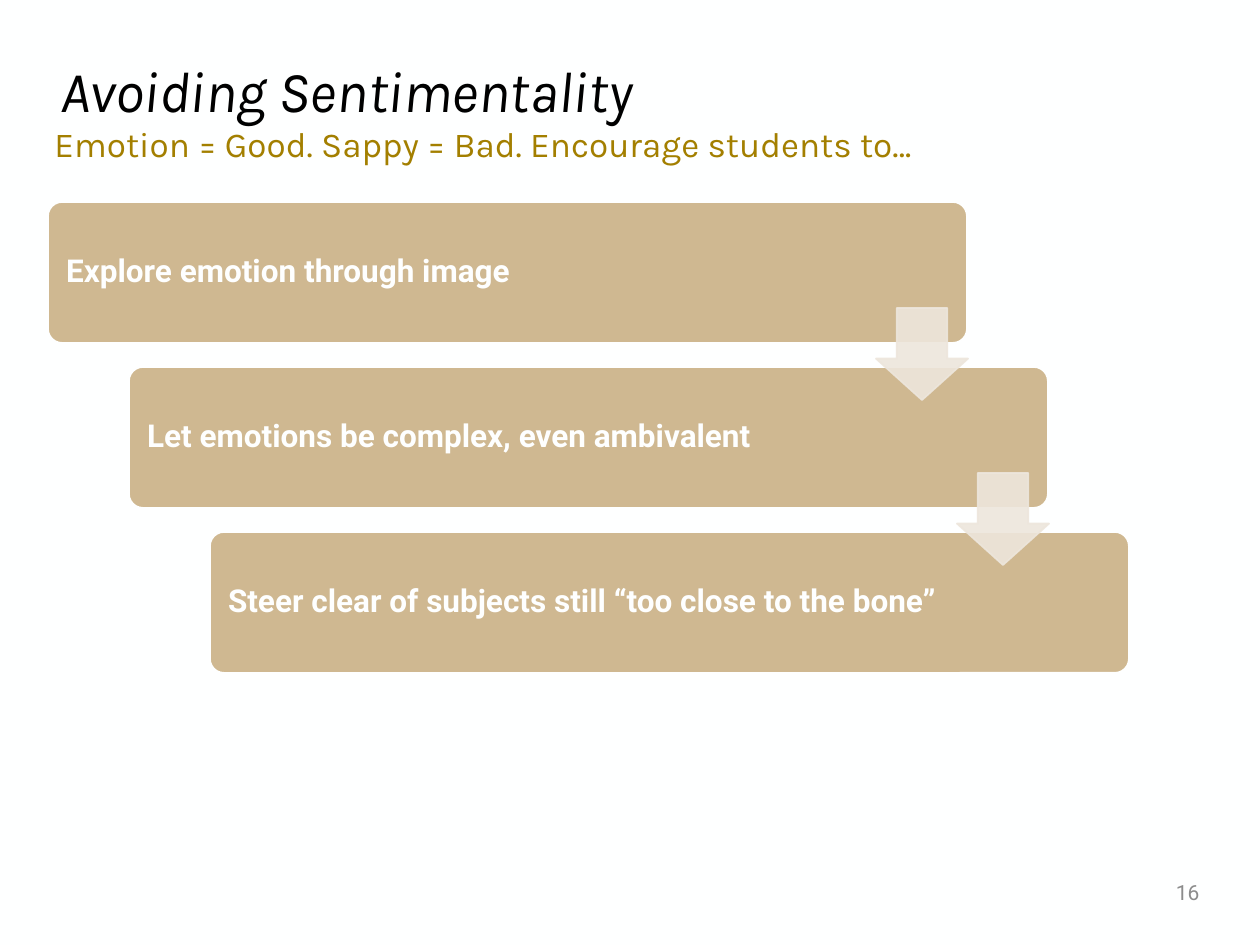
"""Build the Avoiding Sentimentality slide with three stepped cards."""
from dataclasses import dataclass
from lxml.etree import SubElement
from pptx import Presentation
from pptx.dml.color import RGBColor
from pptx.enum.shapes import MSO_SHAPE
from pptx.enum.text import MSO_ANCHOR, PP_ALIGN
from pptx.oxml.ns import qn
from pptx.util import Pt


@dataclass(frozen=True)
class Theme:
    paper: str = "FEFFFF"
    ink: str = "000000"
    gold: str = "A37F00"
    gray: str = "8C8C8C"
    card: str = "CFB891"
    arrow: str = "EDE6DC"
    head: str = "Karla"
    body: str = "Roboto"
    title: int = 33
    lead: int = 20
    label: int = 18
    number: int = 12


theme = Theme()
SCALE = 914400 / 126


def px(*sizes):
    return [round(size * SCALE) for size in sizes]


def write(shape, text, font, size, color, anchor=MSO_ANCHOR.MIDDLE, align=PP_ALIGN.LEFT):
    frame = shape.text_frame
    frame.word_wrap = True
    frame.vertical_anchor = anchor
    frame.text = text
    line = frame.paragraphs[0]
    line.alignment = align
    line.line_spacing = 0.9
    run = line.runs[0]
    run.font.name = font
    run.font.size = Pt(size)
    run.font.color.rgb = RGBColor.from_string(color)
    return run


deck = Presentation()
deck.slide_width, deck.slide_height = px(1260, 945)
slide = deck.slides.add_slide(deck.slide_layouts[6])
slide.background.fill.solid()
slide.background.fill.fore_color.rgb = RGBColor.from_string(theme.paper)
shapes = slide.shapes

title = shapes.add_textbox(*px(48, 53, 1164, 81))
write(title, "Avoiding Sentimentality", theme.head, theme.title, theme.ink).font.italic = True
lead = shapes.add_textbox(*px(42, 121, 1166, 50))
write(lead, "Emotion = Good. Sappy = Bad. Encourage students to…",
      theme.head, theme.lead, theme.gold, MSO_ANCHOR.TOP)
number = shapes.add_textbox(*px(1061, 867, 151, 50))
write(number, "16", theme.body, theme.number, theme.gray, align=PP_ALIGN.RIGHT)
number.text_frame.paragraphs[0].line_spacing = 1.0

steps = [
    "Explore emotion through image",
    "Let emotions be complex, even ambivalent",
    "Steer clear of subjects still “too close to the bone”",
]
DX, DY = 81, 165

for i, step in enumerate(steps):
    card = shapes.add_shape(MSO_SHAPE.ROUNDED_RECTANGLE, *px(48 + i * DX, 202 + i * DY, 919, 141))
    card.adjustments[0] = 0.1
    card.shadow.inherit = False
    card.fill.solid()
    card.fill.fore_color.rgb = RGBColor.from_string(theme.card)
    card.line.color.rgb = RGBColor.from_string(theme.paper)
    card.line.width = Pt(1)
    card.text_frame.margin_left, card.text_frame.margin_right = px(14, 14)
    write(card, step, theme.body, theme.label, theme.paper).font.bold = True

for i in range(len(steps) - 1):
    arrow = shapes.add_shape(MSO_SHAPE.DOWN_ARROW, *px(876 + i * DX, 308 + i * DY, 92, 92))
    arrow.adjustments[0] = 0.55
    arrow.adjustments[1] = 0.45
    arrow.shadow.inherit = False
    arrow.fill.solid()
    arrow.fill.fore_color.rgb = RGBColor.from_string(theme.arrow)
    arrow.line.color.rgb = RGBColor.from_string(theme.arrow)
    arrow.line.width = Pt(1)
    for color in arrow.element.spPr.iter(qn("a:srgbClr")):
        SubElement(color, qn("a:alpha"), val="90000")

deck.save("out.pptx")
